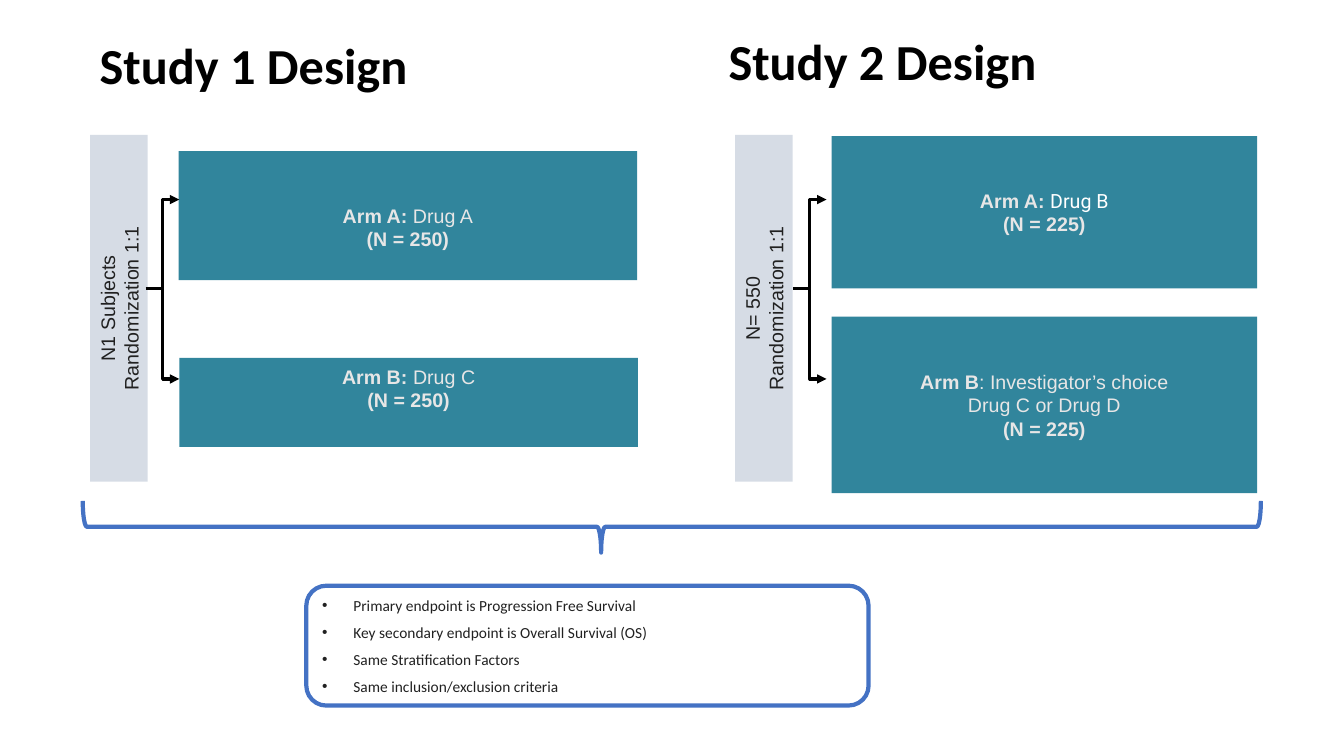
from dataclasses import dataclass

from lxml.etree import SubElement
from pptx import Presentation
from pptx.dml.color import RGBColor
from pptx.enum.shapes import MSO_CONNECTOR as Connector, MSO_SHAPE as Shape
from pptx.enum.text import MSO_ANCHOR as Anchor, PP_ALIGN as Align
from pptx.oxml.ns import qn
from pptx.util import Cm, Pt

BLACK = RGBColor(0x00, 0x00, 0x00)
WHITE = RGBColor(0xFF, 0xFF, 0xFF)
TEAL = RGBColor(0x31, 0x85, 0x9C)
PALE = RGBColor(0xE7, 0xE6, 0xE6)
GREY = RGBColor(0xD6, 0xDC, 0xE5)
DARK = RGBColor(0x21, 0x21, 0x21)
BLUE = RGBColor(0x44, 0x72, 0xC4)

ARM_FORMAT = {"name": "Arial", "size": Pt(14), "color": PALE, "bold": False}
ARM_BOLD = ARM_FORMAT | {"bold": True}
DRUG_B_FORMAT = ARM_FORMAT | {"name": "Roboto", "color": WHITE}
LABEL_FORMAT = ARM_FORMAT | {"color": DARK}
TITLE_FORMAT = {"name": "Calibri", "size": Pt(36), "color": BLACK, "bold": True}
ENDPOINT_FORMAT = {"name": "Calibri", "size": Pt(11), "color": DARK, "bold": False}


@dataclass
class Box:
    left: float
    top: float
    width: float
    height: float

    def lengths(self) -> list:
        return [Cm(value) for value in (self.left, self.top, self.width, self.height)]


@dataclass
class Title:
    text: str
    box: Box
    inset: float
    anchor: Anchor


@dataclass
class Arm:
    name: str
    drug: str
    count: int
    box: Box
    drug_format: dict
    inset_top: float = 0.13
    inset_bottom: float = 0.13


@dataclass
class Study:
    title: Title
    subjects: str
    label_left: float
    fork_left: float
    arms: list


STUDIES = [
    Study(
        Title("Study 1 Design", Box(2.26, 0.84, 12.55, 1.75), 0.25, Anchor.MIDDLE),
        "N1 Subjects", -1.37, 3.68,
        [Arm("Arm A: ", "Drug A", 250, Box(4.5, 3.81, 11.56, 3.25), ARM_FORMAT, inset_top=0.7),
         Arm("Arm B: ", "Drug C", 250, Box(4.52, 9.02, 11.56, 2.24), ARM_FORMAT, inset_bottom=0.85)],
    ),
    Study(
        Title("Study 2 Design", Box(18.36, 0.94, 14.25, 2.29), 0, Anchor.TOP),
        "N= 550", 14.88, 19.99,
        [Arm("Arm A: ", "Drug B", 225, Box(20.96, 3.43, 10.72, 3.84), DRUG_B_FORMAT),
         Arm("Arm B", ": Investigator’s choice\nDrug C or Drug D", 225,
             Box(20.96, 7.98, 10.72, 4.45), ARM_FORMAT)],
    ),
]
ENDPOINTS = [
    "Primary endpoint is Progression Free Survival",
    "Key secondary endpoint is Overall Survival (OS)",
    "Same Stratification Factors",
    "Same inclusion/exclusion criteria",
]
FORK_Y, FORK_WIDTH = 7.28, 0.84
FORK_ENDS = (5.03, 9.55)


def add_run(paragraph, text: str, text_format: dict) -> None:
    for index, line in enumerate(text.split("\n")):
        if index:
            paragraph.add_line_break()
        run = paragraph.add_run()
        run.text = line
        for name, value in text_format.items():
            if name == "color":
                run.font.color.rgb = value
            else:
                setattr(run.font, name, value)


def add_lines(frame, lines: list, alignment: Align) -> None:
    frame.word_wrap = True
    for index, runs in enumerate(lines):
        paragraph = frame.add_paragraph() if index else frame.paragraphs[0]
        paragraph.alignment = alignment
        for text, text_format in runs:
            add_run(paragraph, text, text_format)


def add_panel(slide, kind: Shape, box: Box, fill: RGBColor | None = None):
    shape = slide.shapes.add_shape(kind, *box.lengths())
    shape.shadow.inherit = False
    if fill is None:
        shape.fill.background()
        shape.line.color.rgb = BLUE
        shape.line.width = Pt(3)
    else:
        shape.fill.solid()
        shape.fill.fore_color.rgb = fill
        shape.line.fill.background()
    shape.text_frame.vertical_anchor = Anchor.MIDDLE
    return shape


def add_title(slide, title: Title) -> None:
    frame = slide.shapes.add_textbox(*title.box.lengths()).text_frame
    add_lines(frame, [[(title.text, TITLE_FORMAT)]], Align.LEFT)
    frame.paragraphs[0].line_spacing = 0.9
    frame.vertical_anchor = title.anchor
    for side, share in (("left", 1), ("right", 1), ("top", 0.5), ("bottom", 0.5)):
        setattr(frame, f"margin_{side}", Cm(title.inset * share))


def add_arm(slide, arm: Arm) -> None:
    frame = add_panel(slide, Shape.RECTANGLE, arm.box, TEAL).text_frame
    frame.margin_top, frame.margin_bottom = Cm(arm.inset_top), Cm(arm.inset_bottom)
    add_lines(frame, [
        [(arm.name, ARM_BOLD), (arm.drug, arm.drug_format)],
        [(f"(N = {arm.count})", ARM_BOLD)],
    ], Align.CENTER)


def add_fork(slide, left: float) -> None:
    for end_y in FORK_ENDS:
        arrow = slide.shapes.add_connector(
            Connector.ELBOW, Cm(left), Cm(FORK_Y), Cm(left + FORK_WIDTH), Cm(end_y))
        arrow.line.color.rgb = BLACK
        arrow.line.width = Pt(2.25)
        SubElement(arrow.line._get_or_add_ln(), qn("a:tailEnd"), type="triangle")
        SubElement(arrow._element.spPr, qn("a:effectLst"))


def add_study(slide, study: Study) -> None:
    add_title(slide, study.title)
    label = add_panel(slide, Shape.RECTANGLE, Box(study.label_left, 7.04, 8.74, 1.45), GREY)
    label.rotation = 270
    add_lines(label.text_frame, [
        [(study.subjects, LABEL_FORMAT)],
        [("Randomization 1:1", LABEL_FORMAT)],
    ], Align.CENTER)
    for arm in study.arms:
        add_arm(slide, arm)
    add_fork(slide, study.fork_left)


def add_endpoints(slide) -> None:
    brace = add_panel(slide, Shape.RIGHT_BRACE, Box(16.28, -1.57, 1.3, 29.69))
    brace.rotation = 90
    brace.adjustments[0], brace.adjustments[1] = 0.08, 0.56
    frame = add_panel(slide, Shape.ROUNDED_RECTANGLE, Box(7.72, 14.76, 14.17, 3.02)).text_frame
    add_lines(frame, [[(text, ENDPOINT_FORMAT)] for text in ENDPOINTS], Align.LEFT)
    for index, paragraph in enumerate(frame.paragraphs):
        paragraph.space_before = Pt(6 if index else 0)
        properties = paragraph._p.get_or_add_pPr()
        properties.set("marL", str(Cm(0.79)))
        properties.set("indent", str(-Cm(0.79)))
        SubElement(properties, qn("a:buFont"), typeface="Arial")
        SubElement(properties, qn("a:buChar"), char="•")


def main() -> None:
    presentation = Presentation()
    presentation.slide_width, presentation.slide_height = Cm(33.87), Cm(19.05)
    slide = presentation.slides.add_slide(presentation.slide_layouts[6])
    for study in STUDIES:
        add_study(slide, study)
    add_endpoints(slide)
    presentation.save("out.pptx")


if __name__ == "__main__":
    main()
